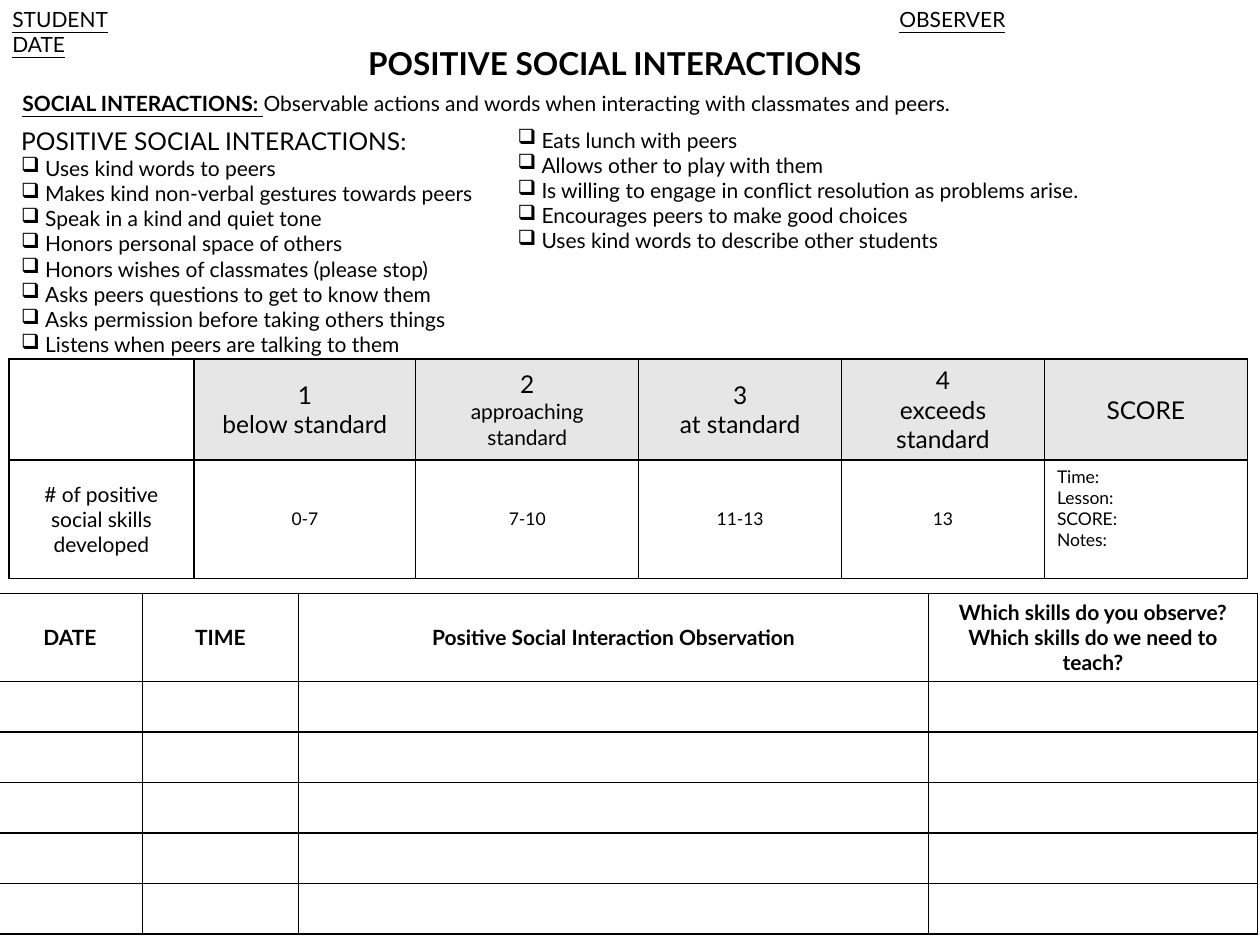
from dataclasses import dataclass

from lxml import etree
from pptx import Presentation
from pptx.dml.color import RGBColor
from pptx.enum.text import MSO_ANCHOR, MSO_AUTO_SIZE, PP_ALIGN
from pptx.oxml.ns import qn
from pptx.util import Inches, Pt

LEFT, CENTER = PP_ALIGN.LEFT, PP_ALIGN.CENTER
TOP, MIDDLE = MSO_ANCHOR.TOP, MSO_ANCHOR.MIDDLE
NO_AUTOFIT = MSO_AUTO_SIZE.NONE
TITLE_ONLY = 5
GRID = Inches(0.1)  # the slide is 100 columns by 75 rows


@dataclass(frozen=True)
class Theme:
    font: str = "Lato"
    ink: str = "000000"
    shade: str = "E7E6E6"
    title: float = 18
    heading: float = 14
    body: float = 12
    small: float = 10
    border: float = 1


THEME = Theme()


def grid(units):
    return int(units * GRID)


def add_bullet(para, mark="❑", indent=0.19):
    properties = para._p.get_or_add_pPr()
    properties.set("marL", str(Inches(indent)))
    properties.set("indent", str(-Inches(indent)))
    etree.SubElement(properties, qn("a:buChar")).set("char", mark)


def add_tab_stop(para, inches):
    stops = etree.SubElement(para._p.get_or_add_pPr(), qn("a:tabLst"))
    etree.SubElement(stops, qn("a:tab"), pos=str(Inches(inches)), algn="l")


def write_text(para, content, size=THEME.body, bold=False, underline=False,
               align=LEFT, bullet=False):
    """Fill a paragraph with a string or with (text, format) spans."""
    para.alignment = align
    if bullet:
        add_bullet(para)
    spans = [(content, {})] if isinstance(content, str) else content
    for text, changes in spans:
        span = para.add_run()
        span.text = text
        font = span.font
        font.name = THEME.font
        font.size = Pt(changes.get("size", size))
        font.bold = changes.get("bold", bold)
        font.underline = changes.get("underline", underline)
        font.color.rgb = RGBColor.from_string(THEME.ink)


class Sheet:
    def __init__(self, deck, theme):
        self.theme = theme
        self.page = deck.slides.add_slide(deck.slide_layouts[TITLE_ONLY])

    def fill_frame(self, frame, lines, **style):
        for number, line in enumerate(lines):
            para = frame.add_paragraph() if number else frame.paragraphs[0]
            write_text(para, line, **style)

    def title(self, text, *place):
        box = self.page.shapes.title
        box.left, box.top, box.width, box.height = map(grid, place)
        frame = box.text_frame
        frame.auto_size, frame.vertical_anchor = NO_AUTOFIT, TOP
        write_text(frame.paragraphs[0], text, size=self.theme.title, bold=True, align=CENTER)

    def text(self, lines, *place, **style):
        frame = self.page.shapes.add_textbox(*map(grid, place)).text_frame
        frame.word_wrap = True
        self.fill_frame(frame, lines, **style)
        return frame

    def table(self, left, top, columns, rows):
        frame = self.page.shapes.add_table(
            len(rows), len(columns), grid(left), grid(top), grid(sum(columns)), grid(sum(rows)))
        table = frame.table
        table.first_row = table.horz_banding = False
        for column, width in zip(table.columns, columns):
            column.width = grid(width)
        for row, height in zip(table.rows, rows):
            row.height = grid(height)
        for cell in table.iter_cells():
            self.border(cell)
            cell.fill.background()
        return table

    def border(self, cell):
        properties = cell._tc.get_or_add_tcPr()
        for side in ("a:lnL", "a:lnR", "a:lnT", "a:lnB"):
            line = etree.SubElement(properties, qn(side), w=str(Pt(self.theme.border)))
            fill = etree.SubElement(line, qn("a:solidFill"))
            etree.SubElement(fill, qn("a:srgbClr"), val=self.theme.ink)

    def cell(self, cell, lines, shade=None, anchor=MIDDLE, align=CENTER, **style):
        cell.vertical_anchor = anchor
        if shade:
            cell.fill.solid()
            cell.fill.fore_color.rgb = RGBColor.from_string(shade)
        self.fill_frame(cell.text_frame, lines, align=align, **style)


def main():
    deck = Presentation()
    deck.slide_width, deck.slide_height = grid(100), grid(75)
    sheet = Sheet(deck, THEME)

    # Name lines, title and definition
    plain = {"underline": False, "bold": False}
    names = sheet.text([[("STUDENT", {}), ("\t", plain), ("OBSERVER", {})], "DATE"],
                       0, 0, 100, 5, underline=True)
    add_tab_stop(names.paragraphs[0], 7.04)
    sheet.title("POSITIVE SOCIAL INTERACTIONS", 0, 3, 97.6, 4)
    sheet.text([[("SOCIAL INTERACTIONS: ", {}),
                 ("Observable actions and words when interacting with classmates and peers.",
                  plain)]], 0.8, 6.7, 98.3, 3, bold=True, underline=True)

    # Checklist in two columns
    checklist = sheet.text([], 0.7, 9.5, 39.4, 19)
    write_text(checklist.paragraphs[0], "POSITIVE SOCIAL INTERACTIONS:", size=THEME.heading)
    for skill in ("Uses kind words to peers",
                  "Makes kind non-verbal gestures towards peers",
                  "Speak in a kind and quiet tone",
                  "Honors personal space of others",
                  "Honors wishes of classmates (please stop)",
                  "Asks peers questions to get to know them",
                  "Asks permission before taking others things",
                  "Listens when peers are talking to them"):
        write_text(checklist.add_paragraph(), skill, bullet=True)
    sheet.text(["Eats lunch with peers",
                "Allows other to play with them",
                "Is willing to engage in conflict resolution as problems arise.",
                "Encourages peers to make good choices",
                "Uses kind words to describe other students"],
               40.1, 9.6, 59, 15.5, bullet=True)

    # Scoring table
    scores = sheet.table(0.7, 28.5, [14.7, 17.6, 17.7, 16.1, 16.1, 16.1], [8, 9.4])
    levels = (["1", "below standard"],
              ["2", [("approaching standard", {"size": THEME.body})]],
              ["3", "at standard"],
              ["4", "exceeds standard"],
              ["SCORE"])
    for column, lines in enumerate(levels, 1):
        sheet.cell(scores.cell(0, column), lines, shade=THEME.shade, size=THEME.heading)
    sheet.cell(scores.cell(1, 0), ["# of positive social skills developed"])
    for column, count in enumerate(("0-7", "7-10", "11-13", "13"), 1):
        sheet.cell(scores.cell(1, column), [count], size=THEME.small)
    sheet.cell(scores.cell(1, 5), ["Time:", "Lesson:", "SCORE:", "Notes:"],
               anchor=TOP, align=LEFT, size=THEME.small)

    # Observation log
    log = sheet.table(-0.2, 47.1, [11.5, 12.4, 50, 26.1], [7] + [4] * 5)
    headings = ("DATE", "TIME", "Positive Social Interaction Observation",
                "Which skills do you observe? Which skills do we need to teach?")
    for column, heading in enumerate(headings):
        sheet.cell(log.cell(0, column), [heading], bold=True)

    deck.save("out.pptx")


if __name__ == "__main__":
    main()
